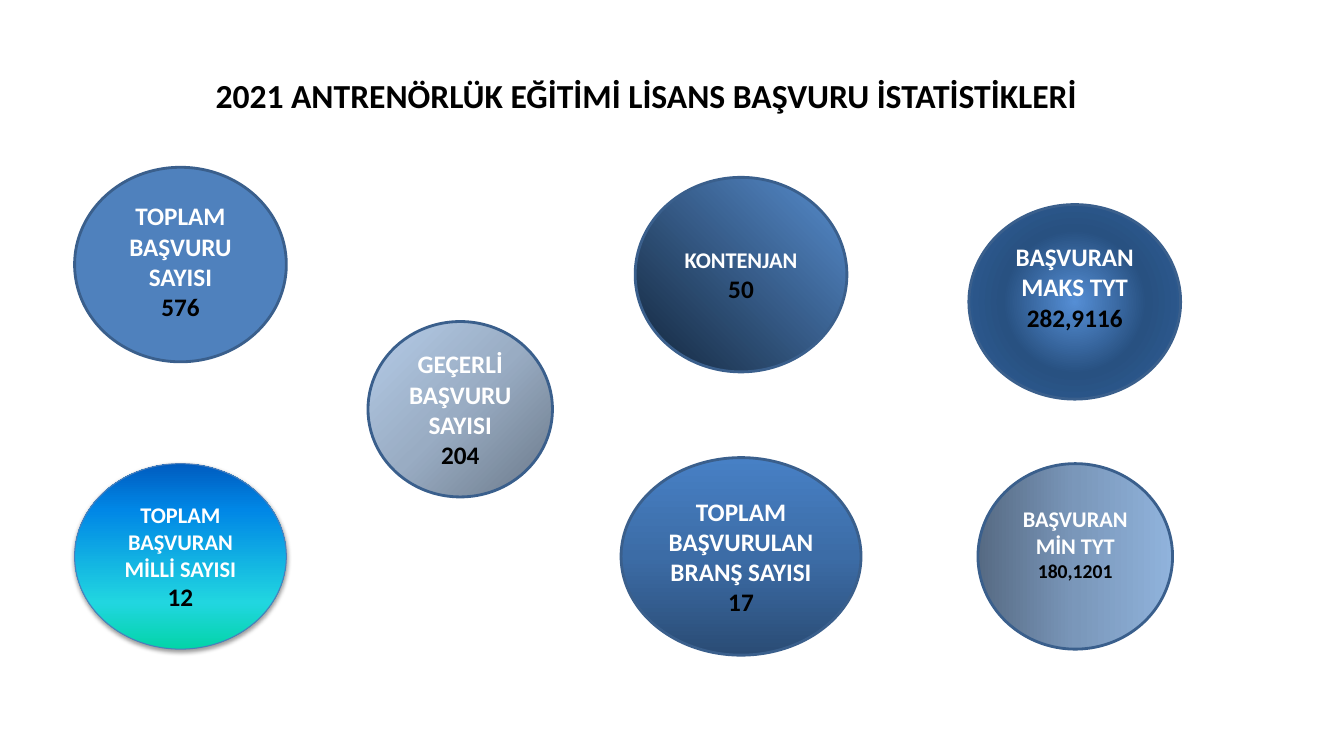
from pptx import Presentation
from pptx import util as u
from pptx.dml.color import RGBColor
from pptx.enum import shapes, text
from pptx.oxml import ns, parse_xml

PX = 9144
BORDER = ("3A5F8C", 2)
MIDDLE = text.MSO_ANCHOR.MIDDLE
TOP = text.MSO_ANCHOR.TOP


def write(paragraph, wording, size, color):
    paragraph.alignment = text.PP_ALIGN.CENTER
    run = paragraph.add_run()
    run.text = wording
    for key, value in {"name": "Calibri", "size": u.Pt(size), "bold": True}.items():
        setattr(run.font, key, value)
    run.font.color.rgb = RGBColor.from_string(color)


def gradient(stops, direction):
    marks = "".join(
        f'<a:gs pos="{pos * 1000}"><a:srgbClr val="{color}"/></a:gs>' for pos, color in stops
    )
    if isinstance(direction, int):
        course = f'<a:lin ang="{direction * 60000}" scaled="0"/>'
    else:
        edges = " ".join(f'{side}="{part * 1000}"' for side, part in zip("ltrb", direction))
        course = f'<a:path path="circle"><a:fillToRect {edges}/></a:path>'
    return parse_xml(
        f'<a:gradFill {ns.nsdecls("a")} rotWithShape="1"><a:gsLst>{marks}</a:gsLst>{course}</a:gradFill>'
    )


presentation = Presentation()
presentation.slide_width = 1333 * PX
presentation.slide_height = 750 * PX
slide = presentation.slides.add_slide(presentation.slide_layouts[6])

heading = slide.shapes.add_textbox(171 * PX, 64 * PX, 940 * PX, 60 * PX).text_frame
heading.word_wrap = True
heading.vertical_anchor = MIDDLE
write(heading.paragraphs[0], "2021 ANTRENÖRLÜK EĞİTİMİ LİSANS BAŞVURU İSTATİSTİKLERİ", 24, "000000")

statistics = [
    ("TOPLAM BAŞVURU SAYISI", 18, "576", 18, (74, 166, 210, 193),
     [(0, "4F81BD")], None, BORDER, TOP, 5),
    ("TOPLAM BAŞVURAN MİLLİ SAYISI", 16, "12", 18, (74, 460, 210, 184),
     [(0, "03D4A8"), (25, "21D6E0"), (75, "0087E6"), (100, "005CBF")], 270,
     ("4B7EBC", 0.75), MIDDLE, 5),
    ("GEÇERLİ BAŞVURU SAYISI", 18, "204", 18, (365, 319, 183, 174),
     [(0, "6B7989"), (50, "99ACC3"), (100, "B5CCE8")], (100, 100, 0, 0), BORDER, MIDDLE, 5),
    ("BAŞVURAN MAKS TYT", 18, "282,9116", 18, (961, 203, 210, 193),
     [(0, "558ED5"), (50, "285181"), (100, "306099")], (50, 50, 50, 50), BORDER, MIDDLE, 35),
    ("TOPLAM BAŞVURULAN BRANŞ SAYISI", 18, "17", 18, (616, 454, 238, 196),
     [(0, "2A4C75"), (50, "3C6CA6"), (100, "4780C5")], 270, BORDER, MIDDLE, 5),
    ("BAŞVURAN MİN TYT", 16, "180,1201", 14, (970, 460, 193, 184),
     [(0, "566A83"), (50, "7A97BA"), (100, "90B3DC")], 0, BORDER, MIDDLE, 29),
    ("KONTENJAN", 16, "50", 18, (630, 176, 210, 193),
     [(0, "13263C"), (88, "4F81BD"), (100, "204066")], (0, 100, 100, 0), BORDER, MIDDLE, 5),
]

for label, label_size, figure, figure_size, box, stops, direction, border, anchor, inset in statistics:
    circle = slide.shapes.add_shape(shapes.MSO_SHAPE.OVAL, *(length * PX for length in box))
    circle.shadow.inherit = False
    circle.fill.solid()
    circle.fill.fore_color.rgb = RGBColor.from_string(stops[0][1])
    properties = circle._element.spPr
    if len(stops) > 1:
        properties.replace(properties.find(ns.qn("a:solidFill")), gradient(stops, direction))
    border_color, border_width = border
    circle.line.color.rgb = RGBColor.from_string(border_color)
    circle.line.width = u.Pt(border_width)
    if border != BORDER:
        properties.find(ns.qn("a:effectLst")).append(parse_xml(
            f'<a:outerShdw {ns.nsdecls("a")} blurRad="{u.Pt(3.1)}" dist="{u.Pt(1.6)}" dir="5400000" '
            'rotWithShape="0"><a:srgbClr val="000000"><a:alpha val="38000"/></a:srgbClr></a:outerShdw>'
        ))
    frame = circle.text_frame
    for key, value in {"word_wrap": True, "vertical_anchor": anchor, "margin_bottom": inset * PX}.items():
        setattr(frame, key, value)
    write(frame.paragraphs[0], label, label_size, "FFFFFF")
    write(frame.add_paragraph(), figure, figure_size, "000000")

presentation.save("out.pptx")
